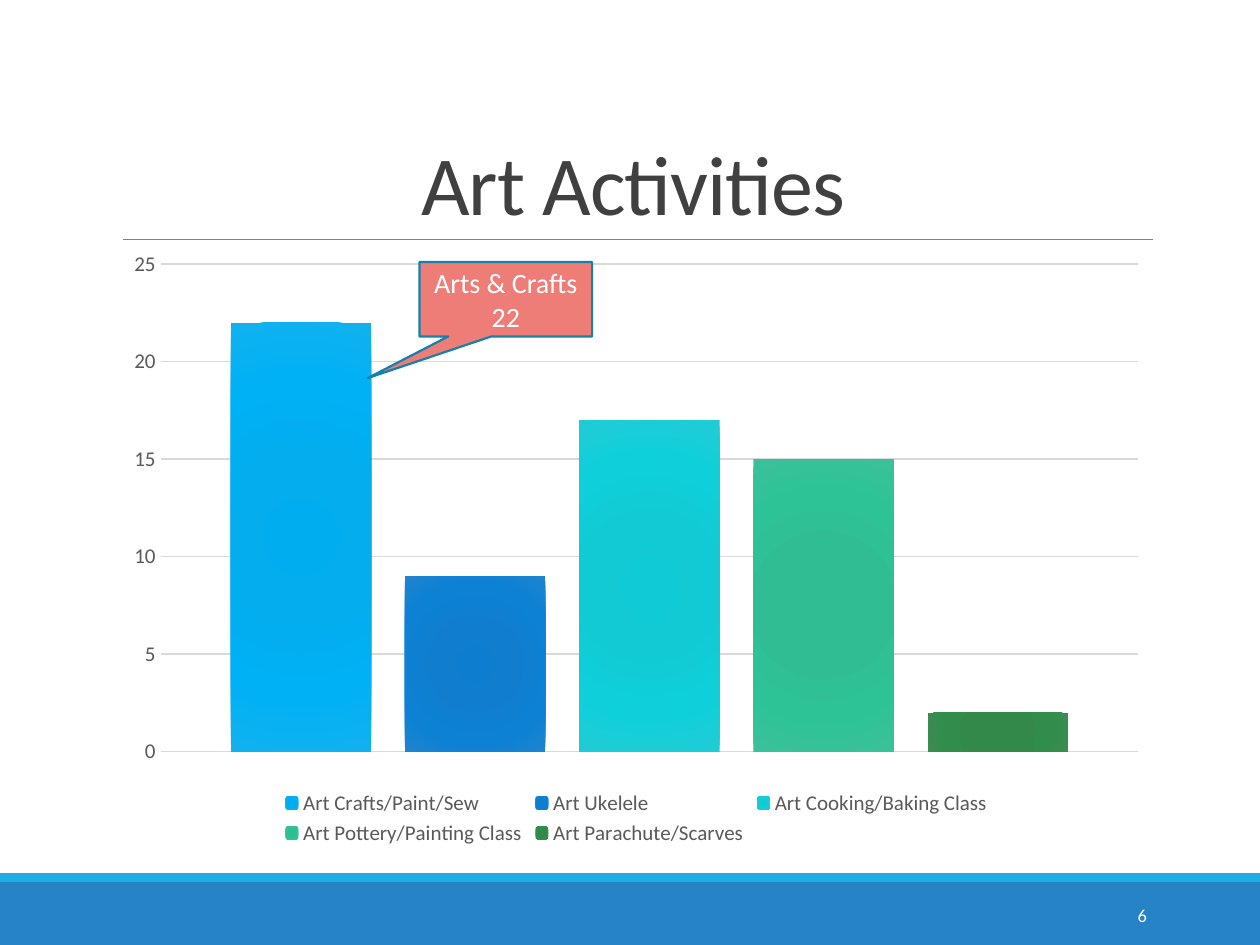
"""Build the Art Activities slide: a column chart with a callout above a two-tone footer."""
from pptx import Presentation, util as u
from pptx.chart.data import CategoryChartData
from pptx.dml.color import RGBColor
from pptx.enum import chart as ch, shapes as sh, text as tx
from pptx.oxml import parse_xml
from pptx.oxml.ns import nsdecls, qn

THEME = {
    "font": "Calibri", "title": 48, "callout": 16, "chart": 12, "number": 10.5,
    "ink": "404040", "label": "595959", "rule": "808080", "grid": "D9D9D9", "white": "FFFFFF",
    "band": "2683C6", "stripe": "1CADE4", "coral": "EE7D77", "edge": "1580A9",
}
COLUMNS, ROWS = 100, 75
STOPS = (0, 34, 70, 100)
ACTIVITIES = [
    ("Art Crafts/Paint/Sew", 22, ("00ADEF", "03ADEE", "00B1F5", "12B1EE")),
    ("Art Ukelele", 9, ("0D7ECF", "117ECD", "0D81D4", "1E84CE")),
    ("Art Cooking/Baking Class", 17, ("0ECBD5", "12CAD3", "0FD0DA", "20CBD4")),
    ("Art Pottery/Painting Class", 15, ("2DBE94", "30BD94", "2EC397", "3CC09A")),
    ("Art Parachute/Scarves", 2, ("2F8949", "32894A", "318D4B", "3A8C51")),
]

deck = Presentation()
deck.slide_width, deck.slide_height = u.Inches(10), u.Inches(7.5)
slide = deck.slides.add_slide(deck.slide_layouts[5])


def cells(left, top, width, height):
    column, row = deck.slide_width / COLUMNS, deck.slide_height / ROWS
    return [round(n * unit) for n, unit in zip((left, top, width, height), (column, row) * 2)]


def style_font(font, size, color):
    for key, value in {"name": THEME["font"], "size": u.Pt(THEME[size]), "bold": False}.items():
        setattr(font, key, value)
    font.color.rgb = RGBColor.from_string(THEME[color])


for area, color in (((0, 70, 100, 5), "band"), ((0, 69.3, 100, 0.7), "stripe")):
    footer = slide.shapes.add_shape(sh.MSO_SHAPE.RECTANGLE, *cells(*area))
    footer.shadow.inherit = False
    footer.fill.solid()
    footer.fill.fore_color.rgb = RGBColor.from_string(THEME[color])
    footer.line.fill.background()

rule = slide.shapes.add_connector(sh.MSO_CONNECTOR.STRAIGHT, *cells(9.8, 19, 91.5, 19))
rule.line.color.rgb = RGBColor.from_string(THEME["rule"])
rule.line.width = u.Pt(0.5)
rule._element.spPr.append(parse_xml(f"<a:effectLst {nsdecls('a')}/>"))

data = CategoryChartData()
data.categories = ["1"]
for activity, count, _ in ACTIVITIES:
    data.add_series(activity, [count])
chart = slide.shapes.add_chart(
    ch.XL_CHART_TYPE.COLUMN_CLUSTERED, *cells(9, 19, 83, 48.5), data).chart
chart.has_title = False
style_font(chart.font, "chart", "label")
chart.has_legend = True
chart.legend.position = ch.XL_LEGEND_POSITION.BOTTOM
chart.legend.include_in_layout = False
style_font(chart.legend.font, "chart", "label")
chart.category_axis.visible = False

counts = chart.value_axis
for key, value in {"minimum_scale": 0, "maximum_scale": 25, "major_unit": 5,
                   "major_tick_mark": ch.XL_TICK_MARK.NONE,
                   "minor_tick_mark": ch.XL_TICK_MARK.NONE}.items():
    setattr(counts, key, value)
counts.format.line.fill.background()
counts.major_gridlines.format.line.color.rgb = RGBColor.from_string(THEME["grid"])
counts.major_gridlines.format.line.width = u.Pt(0.75)
style_font(counts.tick_labels.font, "chart", "label")

columns = chart.plots[0]
for key, value in {"gap_width": 100, "overlap": -24, "vary_by_categories": False}.items():
    setattr(columns, key, value)
for series, (_, _, shades) in zip(columns.series, ACTIVITIES):
    series.format.fill.solid()
    solid = series._element.spPr.find(qn("a:solidFill"))
    stops = "".join(f'<a:gs pos="{stop * 1000}"><a:srgbClr val="{shade}"/></a:gs>'
                    for stop, shade in zip(STOPS, shades))
    solid.getparent().replace(solid, parse_xml(
        f'<a:gradFill {nsdecls("a")} rotWithShape="1"><a:gsLst>{stops}</a:gsLst><a:path path="circle">'
        '<a:fillToRect l="100000" t="100000" r="100000" b="100000"/></a:path></a:gradFill>'))

callout = slide.shapes.add_shape(
    sh.MSO_SHAPE.RECTANGULAR_CALLOUT, *cells(33.3, 20.8, 13.7, 5.9))
callout.shadow.inherit = False
callout.adjustments[0], callout.adjustments[1] = -0.8, 1.06
callout.fill.solid()
callout.fill.fore_color.rgb = RGBColor.from_string(THEME["coral"])
callout.line.color.rgb = RGBColor.from_string(THEME["edge"])
callout.line.width = u.Pt(1.25)

title = slide.shapes.title
title.left, title.top, title.width, title.height = cells(9, 3.1, 82.5, 15.9)
page_number = slide.shapes.add_textbox(*cells(81.2, 70.6, 10.8, 4))

for holder, words, size, color, align, anchor in (
    (title, "Art Activities", "title", "ink", "CENTER", "BOTTOM"),
    (callout, "Arts & Crafts\n22", "callout", "white", "CENTER", "MIDDLE"),
    (page_number, "6", "number", "white", "RIGHT", "MIDDLE"),
):
    frame = holder.text_frame
    frame.text = words
    for key, value in {"word_wrap": True, "auto_size": tx.MSO_AUTO_SIZE.NONE,
                       "vertical_anchor": tx.MSO_ANCHOR[anchor]}.items():
        setattr(frame, key, value)
    for paragraph in frame.paragraphs:
        paragraph.alignment = tx.PP_ALIGN[align]
        style_font(paragraph.runs[0].font, size, color)

heading = title.text_frame.paragraphs[0]
heading.line_spacing = 0.85
heading.runs[0]._r.get_or_add_rPr().set("spc", "-50")

deck.save("out.pptx")
